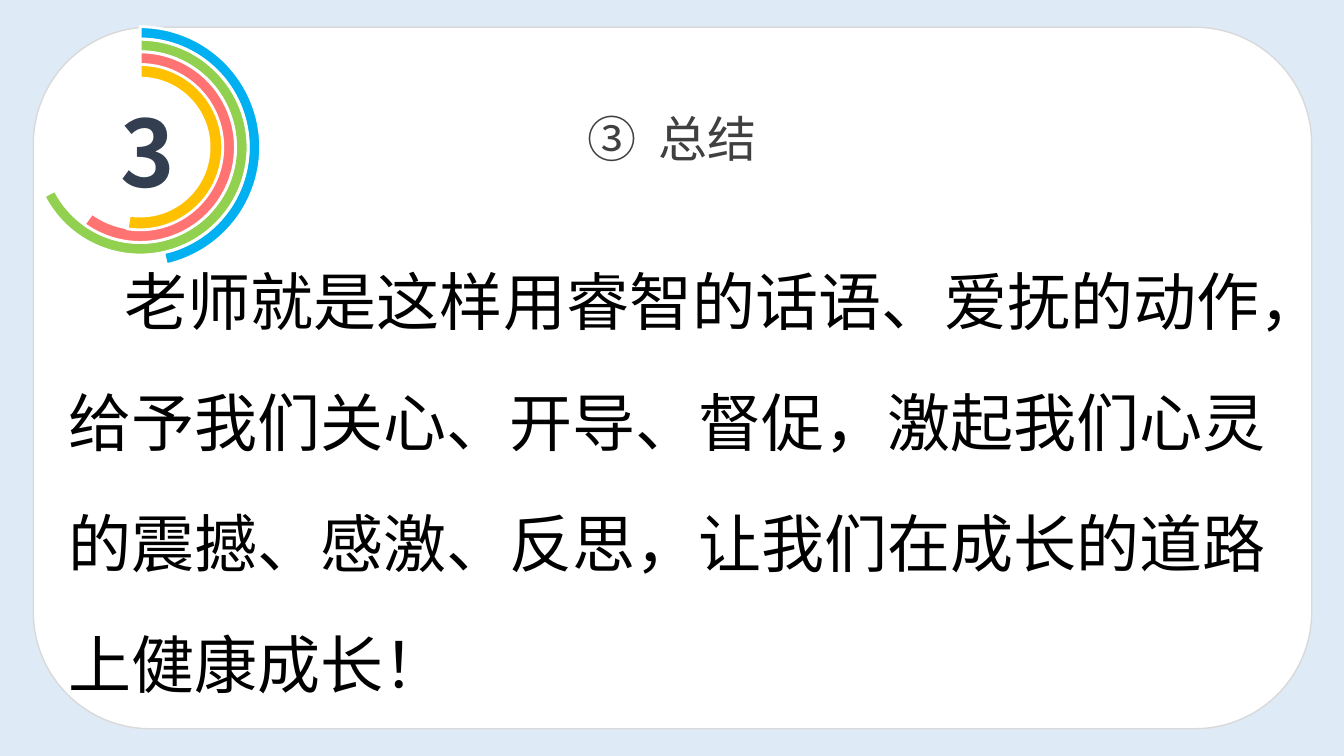
from pptx import Presentation
from pptx.dml.color import RGBColor
from pptx.enum.shapes import MSO_SHAPE
from pptx.enum.text import MSO_AUTO_SIZE, PP_ALIGN
from pptx.oxml.ns import qn
from pptx.util import Inches, Pt

ROUND = MSO_SHAPE.ROUNDED_RECTANGLE
ARC = MSO_SHAPE.BLOCK_ARC
CENTER = PP_ALIGN.CENTER
GROW = MSO_AUTO_SIZE.SHAPE_TO_FIT_TEXT
FONT = "Noto Sans CJK SC"
WIDTH, HEIGHT = 13.33, 7.5
RING_X, RING_Y = 1.39, 1.46
RING_SIZE, RING_STEP = 2.39, 0.25

# Colour, end angle in degrees, thickness as a share of the ring's size
RINGS = [
    ("00B0F0", 77.4, 0.051),
    ("92D050", 153, 0.058),
    ("FF7473", 126, 0.071),
    ("FFC000", 99, 0.083),
]
BODY = (
    "老师就是这样用睿智的话语、爱抚的动作，给予我们关心、开导、督促，"
    "激起我们心灵的震撼、感激、反思，让我们在成长的道路上健康成长！"
)


def color(code):
    return RGBColor.from_string(code)


def add_shape(shapes, kind, box, fill, line, weight):
    shape = shapes.add_shape(kind, *map(Inches, box))
    shape.shadow.inherit = False
    shape.fill.solid()
    shape.fill.fore_color.rgb = color(fill)
    shape.line.color.rgb = color(line)
    shape.line.width = Pt(weight)
    return shape


def add_ring(shapes, order, fill, end, thick):
    """Draw an arc from twelve o'clock to the end angle."""
    size = RING_SIZE - order * RING_STEP
    box = (RING_X - size / 2, RING_Y - size / 2, size, size)
    ring = add_shape(shapes, ARC, box, fill, "FFFFFF", 2)
    # Angles are stored in 60000ths of a degree, scaled by 100000
    for index, value in enumerate((270 * 0.6, end * 0.6, thick)):
        ring.adjustments[index] = value


def add_text(shapes, box, text, size, ink, bold=False, spacing=1.0):
    area = shapes.add_textbox(*map(Inches, box))
    frame = area.text_frame
    frame.word_wrap = True
    para = frame.paragraphs[0]
    para.text = text
    para.line_spacing = spacing
    font = para.font
    font.name, font.size, font.bold = FONT, Pt(size), bold
    font.color.rgb = color(ink)
    # East Asian glyphs take their own typeface
    props = para._p.pPr.find(qn("a:defRPr"))
    props.find(qn("a:latin")).addnext(
        props.makeelement(qn("a:ea"), {"typeface": FONT}))
    return frame, para


def add_badge(slide):
    group = slide.shapes.add_group_shape().shapes
    frame, _ = add_text(group, (1.1, 0.89, 0.58, 1.21), "3", 66, "333F50", True)
    frame.auto_size = GROW
    for order, ring in enumerate(RINGS):
        add_ring(group, order, *ring)


def add_title(slide):
    box = (2.92, 0.89, 7.49, 0.8)
    frame, para = add_text(slide.shapes, box, "③  总结", 35, "404040", spacing=1.2)
    frame.margin_left = frame.margin_right = Inches(0.13)
    frame.margin_top = frame.margin_bottom = Inches(0.07)
    para.alignment = CENTER
    para.space_before = Pt(7)


def add_body(slide):
    box = (0.58, 2.1, 12.17, 4.95)
    frame, para = add_text(slide.shapes, box, BODY, 45, "000000", spacing=1.6)
    frame.auto_size = GROW
    para._p.pPr.set("indent", str(Inches(0.56)))


def main():
    deck = Presentation()
    deck.slide_width, deck.slide_height = Inches(WIDTH), Inches(HEIGHT)
    slide = deck.slides.add_slide(deck.slide_layouts[6])
    back = slide.background.fill
    back.solid()
    back.fore_color.rgb = color("DEEBF7")
    card = (0.33, 0.27, 12.68, 6.96)
    add_shape(slide.shapes, ROUND, card, "FFFFFF", "D9D9D9", 1)
    add_badge(slide)
    add_title(slide)
    add_body(slide)
    deck.save("out.pptx")


if __name__ == "__main__":
    main()
